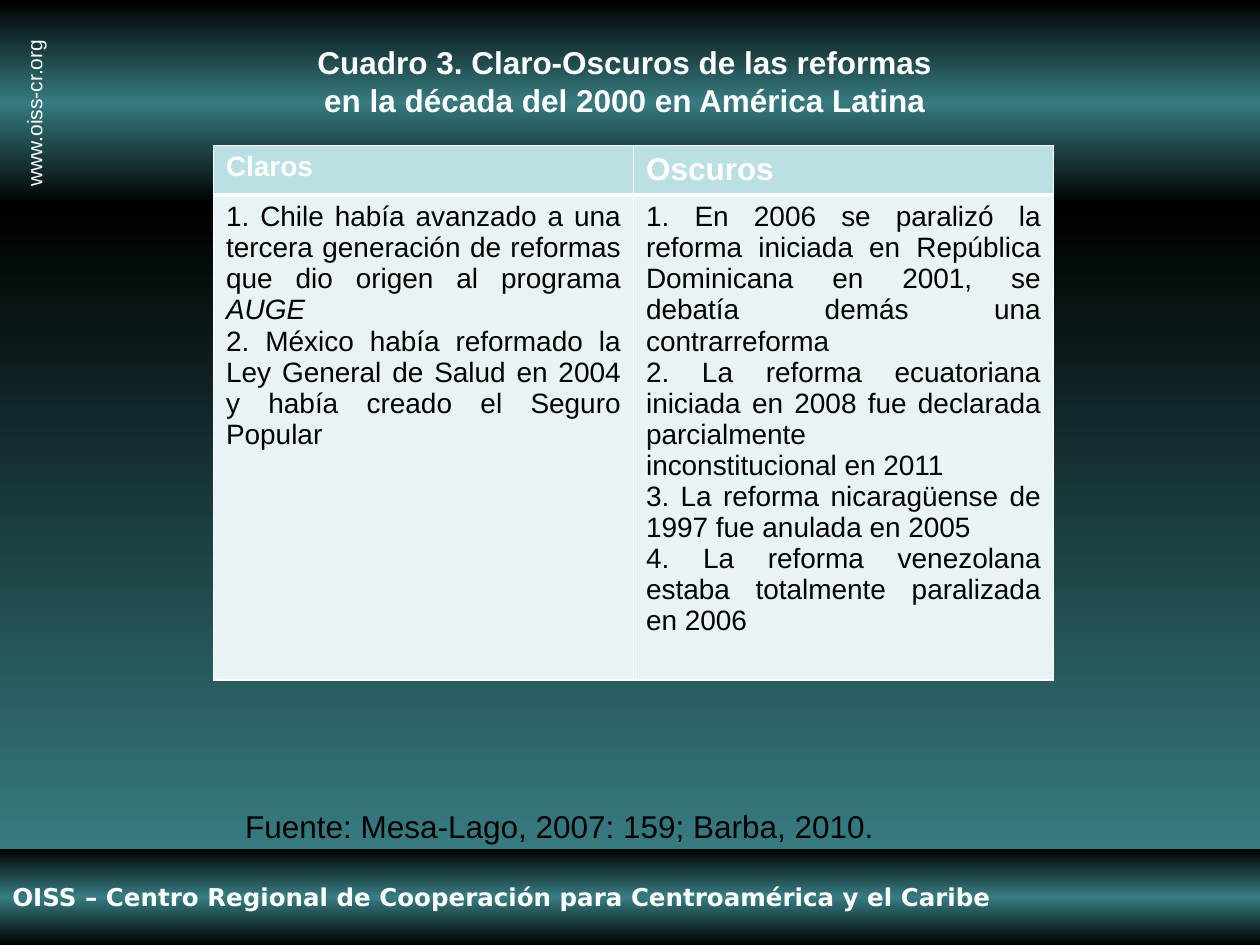
import copy

import pptx
import pptx.dml.color
import pptx.enum.shapes
import pptx.enum.text
import pptx.oxml
import pptx.oxml.ns
import pptx.util

Pt = pptx.util.Pt
Align = pptx.enum.text.PP_ALIGN
Anchor = pptx.enum.text.MSO_ANCHOR
Fit = pptx.enum.text.MSO_AUTO_SIZE
HEX = {"black": "000000", "white": "FFFFFF", "teal": "367B80", "sea": "367D82",
       "head": "BBE0E3", "body": "E7F3F4",
       "mist": "6D8688", "haze": "9BBFC2", "sky": "B8E3E6"}
RGB = {name: pptx.dml.color.RGBColor.from_string(code) for name, code in HEX.items()}


def blend(fill, names):
    """Fill from top to bottom with evenly spaced colours."""
    fill.gradient()
    fill.gradient_angle = 270
    stops = fill._fill._gradFill.gsLst
    while len(stops) < len(names):
        stops.append(copy.deepcopy(stops[0]))
    for i, (stop, name) in enumerate(zip(fill.gradient_stops, names)):
        stop.position = i / (len(names) - 1)
        stop.color.rgb = RGB[name]


def write(frame, lines, size, tint="white", align=Align.LEFT, **style):
    """Write one paragraph for each line; a line is a list of (text, italic)."""
    look = {"name": "Arial", "size": Pt(size), "bold": False} | style
    for i, line in enumerate(lines):
        para = frame.add_paragraph() if i else frame.paragraphs[0]
        para.alignment = align
        for text, italic in line:
            run = para.add_run()
            run.text = text
            for key, value in (look | {"italic": italic}).items():
                setattr(run.font, key, value)
            run.font.color.rgb = RGB[tint]


deck = pptx.Presentation()
deck.slide_width, deck.slide_height = Pt(720), Pt(540)
slide = deck.slides.add_slide(deck.slide_layouts[5])
shapes = slide.shapes
blend(slide.background.fill, ["mist", "haze", "sky"])

# Background bands
bands = [(117, 368, ["black", "teal"]),
         (0, 117, ["black", "teal", "black"]),
         (485, 55, ["black", "sea", "black"])]
for top, high, names in bands:
    band = shapes.add_shape(pptx.enum.shapes.MSO_SHAPE.RECTANGLE,
                            0, Pt(top), Pt(720), Pt(high))
    band.shadow.inherit = False
    band.line.fill.background()
    blend(band.fill, names)

# Footer, written in the last band
foot = band.text_frame
foot.word_wrap = False
foot.vertical_anchor = Anchor.MIDDLE
write(foot, [[("OISS – Centro Regional de Cooperación para Centroamérica y el Caribe", False)]],
      14, name="DejaVu Sans", bold=True)

# Web address
site = shapes.add_textbox(Pt(-30.24), Pt(53.28), Pt(99.36), Pt(21.6))
site.rotation = 270
site.text_frame.word_wrap = False
write(site.text_frame, [[("www.oiss-cr.org", False)]], 12)

# Title, above the bands
title = shapes.title
shapes._spTree.append(title._element)
title.left, title.top, title.width, title.height = Pt(121.5), Pt(21), Pt(471), Pt(51)
title.text_frame.vertical_anchor = Anchor.TOP
title.text_frame.auto_size = Fit.NONE
write(title.text_frame, [[("Cuadro 3. Claro-Oscuros de las reformas", False)],
                         [("en la década del 2000 en América Latina", False)]],
      18, align=Align.CENTER, bold=True)

# Table
light = [
    [("1. Chile había avanzado a una tercera generación de reformas "
      "que dio origen al programa ", False), ("AUGE", True)],
    [("2. México había reformado la Ley General de Salud en 2004 "
      "y había creado el Seguro Popular", False)],
]
dark = [[(text, False)] for text in (
    "1. En 2006 se paralizó la reforma iniciada en República Dominicana en 2001, "
    "se debatía demás una contrarreforma",
    "2. La reforma ecuatoriana iniciada en 2008 fue declarada parcialmente",
    "inconstitucional en 2011",
    "3. La reforma nicaragüense de 1997 fue anulada en 2005 ",
    "4. La reforma venezolana estaba totalmente paralizada en 2006",
)]
table = shapes.add_table(2, 2, Pt(122), Pt(83), Pt(480), Pt(305.5)).table
table.horz_banding = False
for row, high in zip(table.rows, (28.5, 277)):
    row.height = Pt(high)
for col, (name, size, lines) in enumerate([("Claros", 16, light), ("Oscuros", 18, dark)]):
    head, body = table.cell(0, col), table.cell(1, col)
    for cell, thick, tint in ((head, "B", "head"), (body, "T", "body")):
        props = cell._tc.get_or_add_tcPr()
        for side in "LRTB":
            wide = Pt(3 if side == thick else 1)
            props.append(pptx.oxml.parse_xml(
                f'<a:ln{side} {pptx.oxml.ns.nsdecls("a")} w="{wide}"><a:solidFill>'
                f'<a:srgbClr val="{HEX["white"]}"/></a:solidFill></a:ln{side}>'))
        cell.fill.solid()
        cell.fill.fore_color.rgb = RGB[tint]
    write(head.text_frame, [[(name, False)]], size, align=Align.JUSTIFY, bold=True)
    write(body.text_frame, lines, 16, "black", Align.JUSTIFY)

# Source line
note = shapes.add_textbox(Pt(133), Pt(457.5), Pt(459.5), Pt(29))
note.text_frame.word_wrap = True
write(note.text_frame, [[("Fuente: Mesa-Lago, 2007: 159; Barba, 2010.", False)]], 18, "black")

deck.save("out.pptx")
